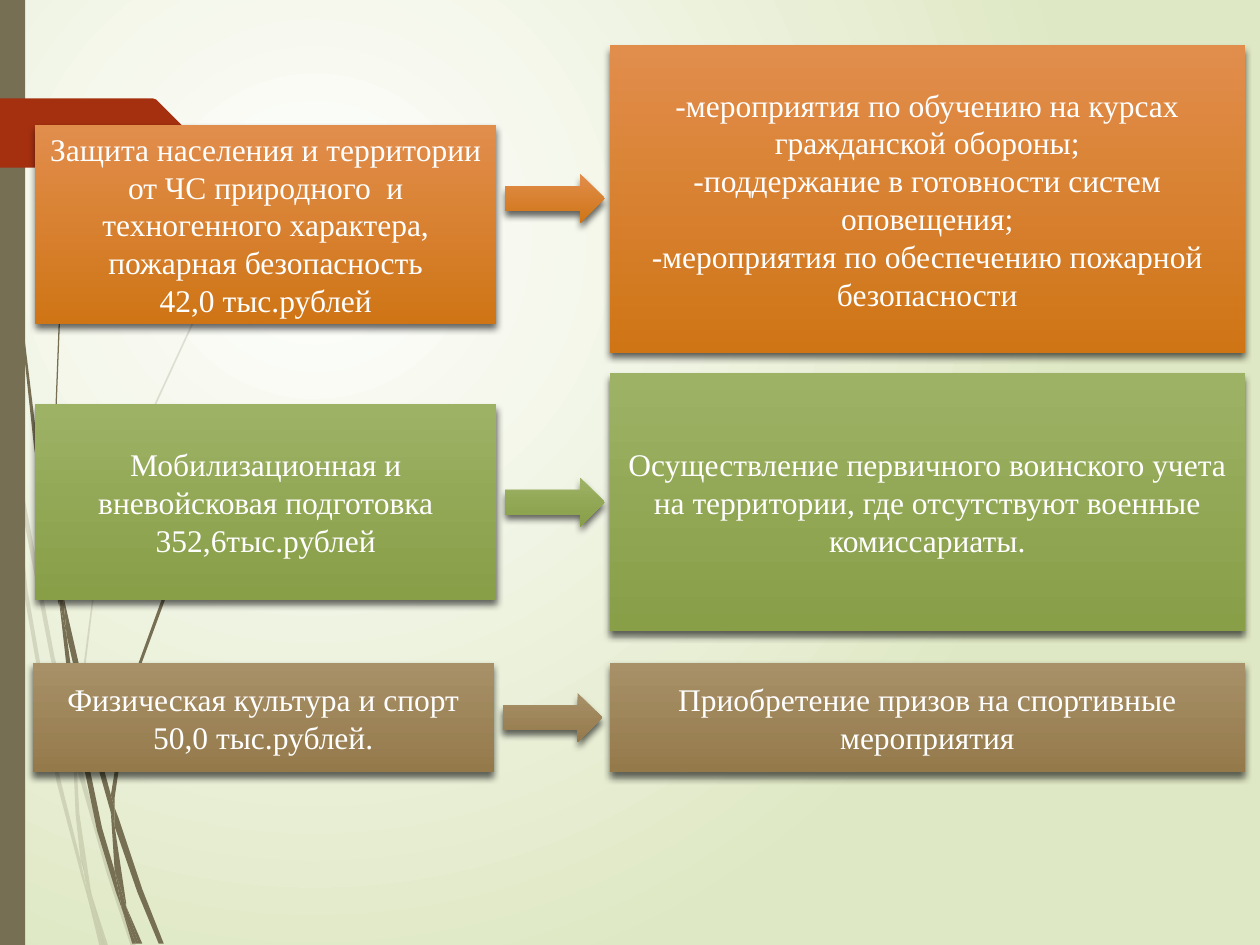
from dataclasses import dataclass

from lxml import etree
from pptx import Presentation
from pptx.dml.color import RGBColor
from pptx.enum.shapes import MSO_SHAPE
from pptx.enum.text import MSO_ANCHOR, PP_ALIGN
from pptx.oxml.ns import qn
from pptx.util import Pt

RECT, ARROW = MSO_SHAPE.RECTANGLE, MSO_SHAPE.RIGHT_ARROW
CENTER, MIDDLE = PP_ALIGN.CENTER, MSO_ANCHOR.MIDDLE
PX = 9144
WIDE, HIGH = 1000, 750


@dataclass(frozen=True)
class Theme:
    font: str = "Times New Roman"
    size: int = 18
    ink: str = "FFFFFF"
    back: tuple = ("FFFFFF", "DFE8C4")
    stem: str = "766F54"
    tag: str = "A53010"
    shade: str = "000000"
    orange: tuple = ("E18D4C", "CF7516")
    green: tuple = ("9DB265", "889E47")
    brown: tuple = ("A89068", "947A4B")


THEME = Theme()

PALE = [
    [(8, 350), (6, 322), (0, 282), (0, 299), (7, 344)],
    [(40, 522), (59, 599), (59, 586), (43, 520), (10, 345), (12, 376)],
    [(64, 607), (61, 596), (61, 610), (85, 694), (104, 751), (108, 751), (88, 692)],
    [(83, 751), (86, 751), (73, 711)],
    [(64, 683), (48, 619), (22, 469), (12, 376), (8, 350), (19, 470), (45, 621),
     (64, 693), (70, 714), (69, 707)],
    [(58, 599), (60, 646), (64, 683), (67, 692), (73, 711), (72, 706), (63, 646),
     (61, 610), (61, 608)],
    [(61, 584), (76, 462), (111, 349), (159, 245), (187, 198), (201, 175), (217, 154),
     (217, 153), (201, 175), (186, 197), (158, 244), (110, 348), (75, 461), (59, 584),
     (59, 586), (61, 596)],
    [(70, 714), (79, 751), (82, 751)],
    [(61, 608), (61, 610), (61, 596), (59, 586), (58, 599)],
    [(67, 692), (65, 683), (69, 707), (70, 714), (82, 751), (83, 751), (73, 711)],
]

DARK = [
    [(5, 110), (14, 233), (27, 355), (46, 477), (47, 481), (45, 457), (45, 453),
     (30, 355), (15, 232), (6, 109), (4, 48), (3, 0), (2, 0), (3, 48)],
    [(73, 592), (88, 645), (88, 633), (88, 631), (77, 590), (50, 472), (53, 505)],
    [(94, 649), (91, 641), (91, 656), (109, 708), (126, 749), (130, 749), (113, 706)],
    [(91, 691), (81, 657), (60, 556), (53, 505), (47, 477), (56, 557), (77, 659),
     (92, 708), (97, 722), (96, 717)],
    [(50, 472), (48, 453), (44, 349), (48, 245), (52, 193), (58, 141), (51, 193),
     (47, 245), (43, 349), (45, 449), (49, 472)],
    [(110, 749), (113, 749), (100, 719)],
    [(47, 477), (53, 505), (50, 472), (49, 472), (45, 449), (45, 453)],
    [(91, 633), (103, 552), (131, 476), (169, 406), (191, 374), (203, 359), (216, 344),
     (215, 344), (203, 358), (191, 373), (168, 405), (129, 474), (101, 551), (88, 631),
     (91, 641)],
    [(97, 722), (105, 749), (108, 749)],
    [(88, 645), (91, 691), (96, 706), (100, 719), (100, 716), (91, 656), (90, 651)],
    [(88, 645), (90, 651), (91, 656), (91, 641), (88, 631), (88, 633)],
    [(96, 706), (91, 691), (96, 717), (97, 722), (108, 749), (110, 749), (100, 719)],
]

TAG = [(0, 0), (121, 0), (124, 1), (149, 26), (149, 29), (124, 54), (121, 55), (0, 55)]

ROWS = [
    ((28, 36, 960, 244), 158, 20, THEME.orange,
     ["Защита населения и территории от ЧС природного  и техногенного характера, "
      "пожарная безопасность", "42,0 тыс.рублей"],
     ["-мероприятия по обучению на курсах гражданской обороны;",
      "-поддержание в готовности систем оповещения;",
      "-мероприятия по обеспечению пожарной безопасности"]),
    ((28, 296, 960, 205), 155, 0, THEME.green,
     ["Мобилизационная и вневойсковая подготовка", "352,6тыс.рублей"],
     ["Осуществление первичного воинского учета на территории, где отсутствуют "
      "военные комиссариаты."]),
    ((26, 526, 962, 87), 87, 0, THEME.brown,
     ["Физическая культура и спорт", "50,0 тыс.рублей."],
     ["Приобретение призов на спортивные мероприятия"]),
]


def blend(fill, pair):
    fill.gradient()
    for stop, tone in zip(fill.gradient_stops, pair):
        stop.color.rgb = RGBColor.from_string(tone)


def paint(shape, tone, alpha=None):
    shape.shadow.inherit = False
    shape.line.fill.background()
    if isinstance(tone, tuple):
        blend(shape.fill, tone)
        shape.fill.gradient_angle = 270
        return
    shape.fill.solid()
    shape.fill.fore_color.rgb = RGBColor.from_string(tone)
    if alpha:
        node = shape.element.spPr.find(".//" + qn("a:srgbClr"))
        etree.SubElement(node, qn("a:alpha"), val=str(alpha * 1000))


def shade(shape):
    effects = shape.element.spPr.find(qn("a:effectLst"))
    outer = etree.SubElement(effects, qn("a:outerShdw"), blurRad=str(Pt(4)),
                             dist=str(Pt(3)), dir="5400000", rotWithShape="0")
    color = etree.SubElement(outer, qn("a:srgbClr"), val=THEME.shade)
    etree.SubElement(color, qn("a:alpha"), val="60000")


def write(shape, lines, font=THEME.font, size=THEME.size, ink=THEME.ink):
    frame = shape.text_frame
    frame.word_wrap = True
    frame.vertical_anchor = MIDDLE
    for i, line in enumerate(lines):
        para = frame.add_paragraph() if i else frame.paragraphs[0]
        para.alignment = CENTER
        run = para.add_run()
        run.text = line
        run.font.name = font
        run.font.size = Pt(size)
        run.font.color.rgb = RGBColor.from_string(ink)


def block(slide, kind, box, tone):
    shape = slide.shapes.add_shape(kind, *(n * PX for n in box))
    paint(shape, tone)
    return shape


def trace(slide, left, top, points, tone, alpha=None):
    spots = [(left + x, top + y) for x, y in points]
    build = slide.shapes.build_freeform(*spots[0], scale=PX)
    build.add_line_segments(spots[1:], close=True)
    paint(build.convert_to_shape(), tone, alpha)


def backdrop(slide):
    blend(slide.background.fill, THEME.back)
    grad = slide.element.find(".//" + qn("a:gradFill"))
    grad.remove(grad.find(qn("a:lin")))
    route = etree.SubElement(grad, qn("a:path"))
    route.set("path", "circle")
    etree.SubElement(route, qn("a:fillToRect"), l="50000", t="50000",
                     r="100000", b="100000")


def margin(slide, left, top, wide, high):
    for points in PALE:
        trace(slide, left, top, points, THEME.stem, alpha=20)
    for points in DARK:
        trace(slide, left, top, points, THEME.stem)
    block(slide, RECT, (left, top, wide, high), THEME.stem)
    trace(slide, left, top + 78, TAG, THEME.tag)


def row(slide, box, tall, drop, tone, topic, detail):
    left, top, wide, high = box
    card = block(slide, RECT, (left, top + (high - tall) // 2 + drop, 366, tall), tone)
    write(card, topic)
    note = block(slide, RECT, (left + wide - 504, top, 504, high), tone)
    write(note, detail)
    arrow = block(slide, ARROW, (left + 373, top + (high - 39) // 2, 79, 39), tone)
    for shape in (card, note, arrow):
        shade(shape)


def main():
    deck = Presentation()
    deck.slide_width, deck.slide_height = WIDE * PX, HIGH * PX
    slide = deck.slides.add_slide(deck.slide_layouts[6])
    backdrop(slide)
    margin(slide, 0, 0, 20, HIGH)
    for part in ROWS:
        row(slide, *part)
    deck.save("out.pptx")


if __name__ == "__main__":
    main()
